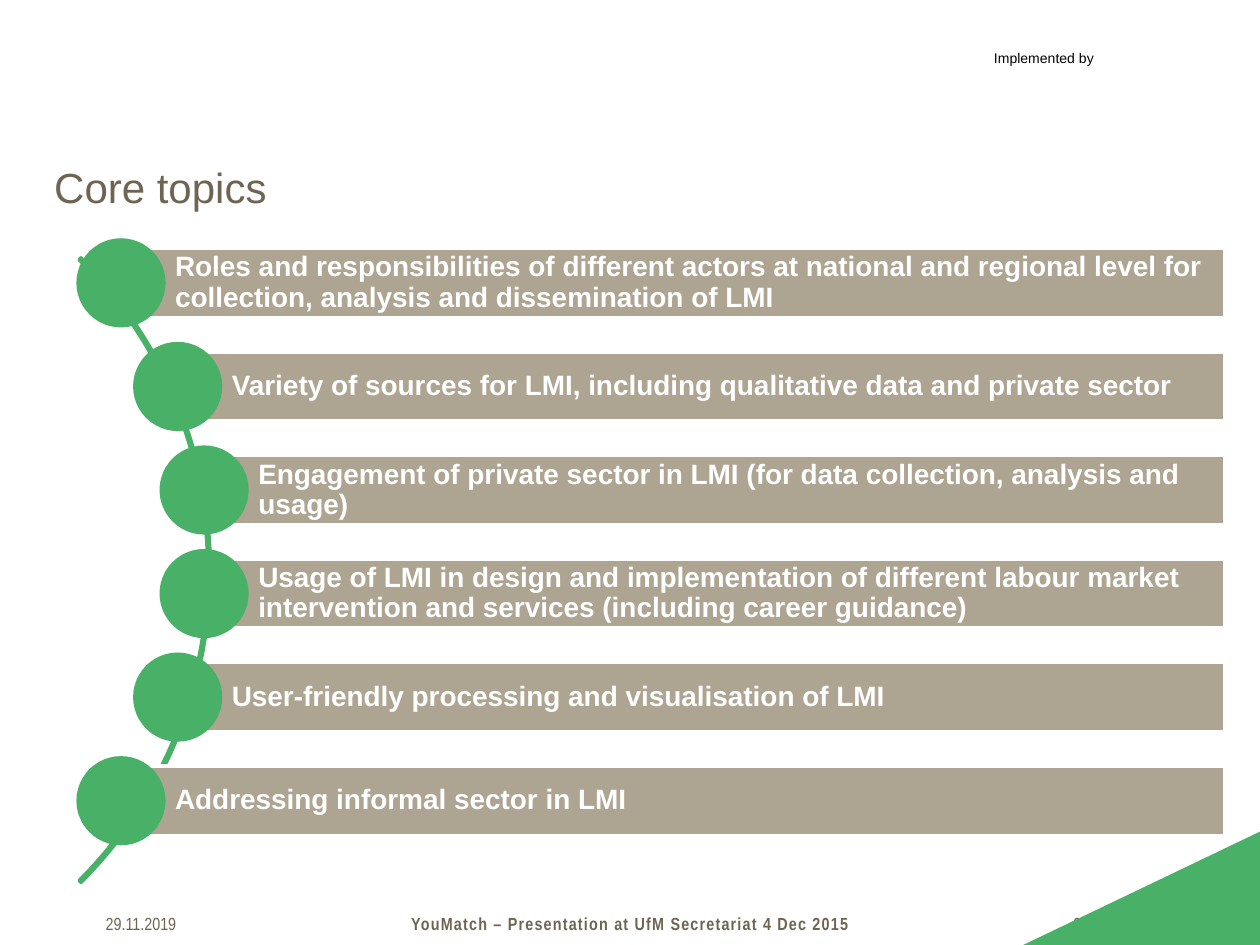
import dataclasses

import pptx
import pptx.dml.color
import pptx.enum.shapes
import pptx.enum.text
import pptx.util

Inches = pptx.util.Inches
Pt = pptx.util.Pt
RGBColor = pptx.dml.color.RGBColor
Shape = pptx.enum.shapes.MSO_SHAPE
Anchor = pptx.enum.text.MSO_ANCHOR
Align = pptx.enum.text.PP_ALIGN

GREEN = RGBColor(0x48, 0xB1, 0x67)
SAND = RGBColor(0xAE, 0xA4, 0x92)
BROWN = RGBColor(0x6E, 0x64, 0x52)
WHITE = RGBColor(0xFF, 0xFF, 0xFF)
BLACK = RGBColor(0, 0, 0)

# Topic list geometry, in inches
FIRST_TOP = 1.97
ROW_STEP = 0.822
BAR_RIGHT = 9.72
BAR_HEIGHT = 0.55
CIRCLE_SIZE = 0.68


@dataclasses.dataclass
class Topic:
    text: str
    left: float


@dataclasses.dataclass
class Label:
    text: str
    area: tuple[float, float, float, float]
    font: dict
    align: Align = Align.LEFT
    tracking: int = 0  # hundredths of a point


TOPICS = [
    Topic("Roles and responsibilities of different actors at national and regional level for "
          "collection, analysis and dissemination of LMI", 0.96),
    Topic("Variety of sources for LMI, including qualitative data and private sector", 1.41),
    Topic("Engagement of private sector in LMI (for data collection, analysis and usage)", 1.62),
    Topic("Usage of LMI in design and implementation of different labour market intervention "
          "and services (including career guidance)", 1.62),
    Topic("User-friendly processing and visualisation of LMI", 1.41),
    Topic("Addressing informal sector in LMI", 0.96),
]

TITLE_FONT = {"name": "Arial", "size": Pt(24), "bold": False}
TOPIC_FONT = {"name": "Arial", "size": Pt(16), "bold": True}
NOTE_FONT = {"name": "Arial", "size": Pt(8)}
FOOTER_FONT = {"name": "Arial Narrow", "size": Pt(10)}

LABELS = [
    Label("3", (8.42, 7.2, 1.01, 0.27), FOOTER_FONT),
    Label("Implemented by", (7.79, 0.34, 1.17, 0.24), NOTE_FONT),
    Label("YouMatch – Presentation at UfM Secretariat 4 Dec 2015", (3.13, 7.2, 3.74, 0.27),
          FOOTER_FONT | {"bold": True}, Align.CENTER, 70),
    Label("29.11.2019", (0.74, 7.2, 1.42, 0.27), FOOTER_FONT),
]


def write(frame, text: str, font: dict, color: RGBColor, align: Align = Align.LEFT):
    """Put one formatted span into a text frame and return it."""
    frame.word_wrap = True
    para = frame.paragraphs[0]
    para.alignment = align
    span = para.add_run()
    span.text = text
    for name, value in font.items():
        setattr(span.font, name, value)
    span.font.color.rgb = color
    return span


def add_label(page, label: Label) -> None:
    box = page.shapes.add_textbox(*map(Inches, label.area))
    color = BLACK if label.font is NOTE_FONT else BROWN
    span = write(box.text_frame, label.text, label.font, color, label.align)
    if label.tracking:
        span.font._element.set("spc", str(label.tracking))


def add_figure(page, kind: Shape, area: tuple, fill: RGBColor | None, line: RGBColor | None):
    figure = page.shapes.add_shape(kind, *map(Inches, area))
    figure.shadow.inherit = False
    if fill is None:
        figure.fill.background()
    else:
        figure.fill.solid()
        figure.fill.fore_color.rgb = fill
    if line is None:
        figure.line.fill.background()
    else:
        figure.line.color.rgb = line
        figure.line.width = Pt(2)
    return figure


def add_topic(page, topic: Topic, top: float) -> None:
    bar = add_figure(page, Shape.RECTANGLE,
                     (topic.left, top, BAR_RIGHT - topic.left, BAR_HEIGHT), SAND, WHITE)
    frame = bar.text_frame
    margins = {"margin_left": 0.43, "margin_top": 0.04, "margin_right": 0.04, "margin_bottom": 0.04}
    for name, value in margins.items():
        setattr(frame, name, Inches(value))
    frame.vertical_anchor = Anchor.MIDDLE
    write(frame, topic.text, TOPIC_FONT, WHITE)
    frame.paragraphs[0].line_spacing = 0.9
    # The circle is centred on the left end of the bar
    circle_top = top + (BAR_HEIGHT - CIRCLE_SIZE) / 2
    add_figure(page, Shape.OVAL,
               (topic.left - CIRCLE_SIZE / 2, circle_top, CIRCLE_SIZE, CIRCLE_SIZE), GREEN, GREEN)


def main() -> None:
    deck = pptx.Presentation()
    deck.slide_width, deck.slide_height = Inches(10), Inches(7.5)
    page = deck.slides.add_slide(deck.slide_layouts[5])

    # Title
    title = page.shapes.title
    title.left, title.top, title.width, title.height = map(Inches, (0.33, 1.23, 8.5, 0.68))
    title.text_frame.vertical_anchor = Anchor.TOP
    write(title.text_frame, "Core topics", TITLE_FONT, BROWN)

    # Header note and footer
    for label in LABELS:
        add_label(page, label)

    # Arc that links the topics
    arc = add_figure(page, Shape.BLOCK_ARC, (-5.34, 1.02, 7.01, 7.01), None, GREEN)
    for index, value in enumerate((189, 27, 0.003)):
        arc.adjustments[index] = value

    # Topics
    for row, topic in enumerate(TOPICS):
        add_topic(page, topic, FIRST_TOP + row * ROW_STEP)

    # Corner triangle
    corner = add_figure(page, Shape.RIGHT_TRIANGLE, (8.61, 6.11, 0.9, 1.88), GREEN, None)
    corner.rotation = 270

    deck.save("out.pptx")


if __name__ == "__main__":
    main()
